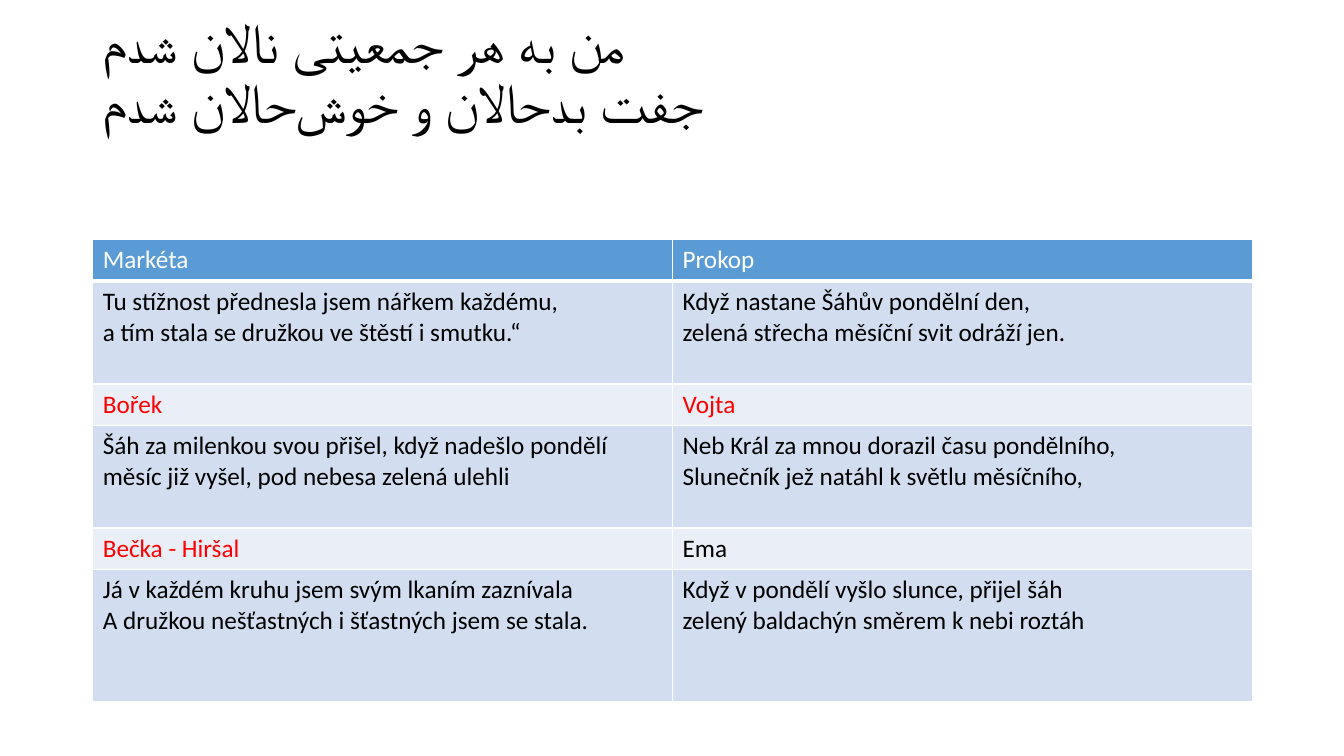
"""Build a slide with a Persian couplet and a table of its Czech translations."""
from dataclasses import dataclass

from lxml.etree import SubElement
from pptx import Presentation
from pptx.dml.color import RGBColor
from pptx.enum.text import MSO_ANCHOR, MSO_AUTO_SIZE, PP_ALIGN
from pptx.oxml.ns import qn
from pptx.util import Inches, Pt

ZERO_WIDTH_NON_JOINER = chr(0x200C)
HAPPY = ZERO_WIDTH_NON_JOINER.join(["خوش", "حالان"])
COUPLET = f"من به هر جمعیتی نالان شدم\nجفت بدحالان و {HAPPY} شدم"

TRANSLATIONS = [
    (["Markéta"], ["Prokop"]),
    (["Tu stížnost přednesla jsem nářkem každému,\na tím stala se družkou ve štěstí i smutku.“"],
     ["Když nastane Šáhův pondělní den,", "zelená střecha měsíční svit odráží jen."]),
    (["Bořek"], ["Vojta"]),
    (["Šáh za milenkou svou přišel, když nadešlo pondělí\nměsíc již vyšel, pod nebesa zelená ulehli"],
     ["Neb Král za mnou dorazil času pondělního,", "Slunečník jež natáhl k světlu měsíčního,"]),
    (["Bečka - Hiršal"], ["Ema"]),
    (["Já v každém kruhu jsem svým lkaním zaznívala",
      "A družkou nešťastných i šťastných jsem se stala."],
     ["Když v pondělí vyšlo slunce, přijel šáh", "zelený baldachýn směrem k nebi roztáh"]),
]
HIGHLIGHTED = {"Bořek", "Vojta", "Bečka - Hiršal"}
ROW_HEIGHTS = [0.41, 1.02, 0.41, 1.02, 0.41, 1.31]
LEFT, WIDTH = 0.92, 11.5


@dataclass(frozen=True)
class Theme:
    font: str = "Calibri"
    title_size: float = 39.6
    table_size: float = 18
    text: str = "000000"
    highlight: str = "FF0000"
    white: str = "FFFFFF"
    header_fill: str = "5B9BD5"
    verse_fill: str = "D2DEEF"
    name_fill: str = "EAEFF7"


THEME = Theme()


def write_text(text_frame, paragraphs, size, color, line_spacing=1.0, right_to_left=False):
    for index, text in enumerate(paragraphs):
        paragraph = text_frame.paragraphs[0] if index == 0 else text_frame.add_paragraph()
        paragraph.text = text
        paragraph.alignment = PP_ALIGN.LEFT
        paragraph.line_spacing = line_spacing
        if right_to_left:
            paragraph._p.get_or_add_pPr().set("rtl", "1")
        for run in paragraph.runs:
            run.font.name = THEME.font
            run.font.size = Pt(size)
            run.font.bold = False
            run.font.color.rgb = RGBColor.from_string(color)


def set_borders(cell, bottom_width):
    properties = cell._tc.get_or_add_tcPr()
    for side, width in (("L", 1), ("R", 1), ("T", 1), ("B", bottom_width)):
        line = SubElement(properties, qn(f"a:ln{side}"), w=str(Pt(width)))
        fill = SubElement(line, qn("a:solidFill"))
        SubElement(fill, qn("a:srgbClr"), val=THEME.white)


def add_title(slide):
    title = slide.shapes.title
    title.left, title.top = Inches(LEFT), Inches(0.4)
    title.width, title.height = Inches(WIDTH), Inches(1.3)
    frame = title.text_frame
    frame.word_wrap = True
    frame.auto_size = MSO_AUTO_SIZE.NONE
    frame.vertical_anchor = MSO_ANCHOR.MIDDLE
    frame.margin_bottom = Inches(0.65)
    write_text(frame, [COUPLET], THEME.title_size, THEME.text,
               line_spacing=0.9, right_to_left=True)


def add_translations(slide):
    table = slide.shapes.add_table(
        len(TRANSLATIONS), 2, Inches(LEFT), Inches(2.38),
        Inches(WIDTH), Inches(sum(ROW_HEIGHTS))).table
    for row_index, (row, height) in enumerate(zip(TRANSLATIONS, ROW_HEIGHTS)):
        table.rows[row_index].height = Inches(height)
        is_header = row_index == 0
        if is_header:
            row_fill = THEME.header_fill
        else:
            row_fill = THEME.verse_fill if row_index % 2 else THEME.name_fill
        for column_index, paragraphs in enumerate(row):
            cell = table.cell(row_index, column_index)
            color = THEME.white if is_header else THEME.text
            if paragraphs[0] in HIGHLIGHTED:
                color = THEME.highlight
            write_text(cell.text_frame, paragraphs, THEME.table_size, color)
            set_borders(cell, bottom_width=3 if is_header else 1)
            cell.fill.solid()
            cell.fill.fore_color.rgb = RGBColor.from_string(row_fill)


def main():
    presentation = Presentation()
    presentation.slide_width, presentation.slide_height = Inches(13.33), Inches(7.5)
    slide = presentation.slides.add_slide(presentation.slide_layouts[5])
    add_title(slide)
    add_translations(slide)
    presentation.save("out.pptx")


if __name__ == "__main__":
    main()
